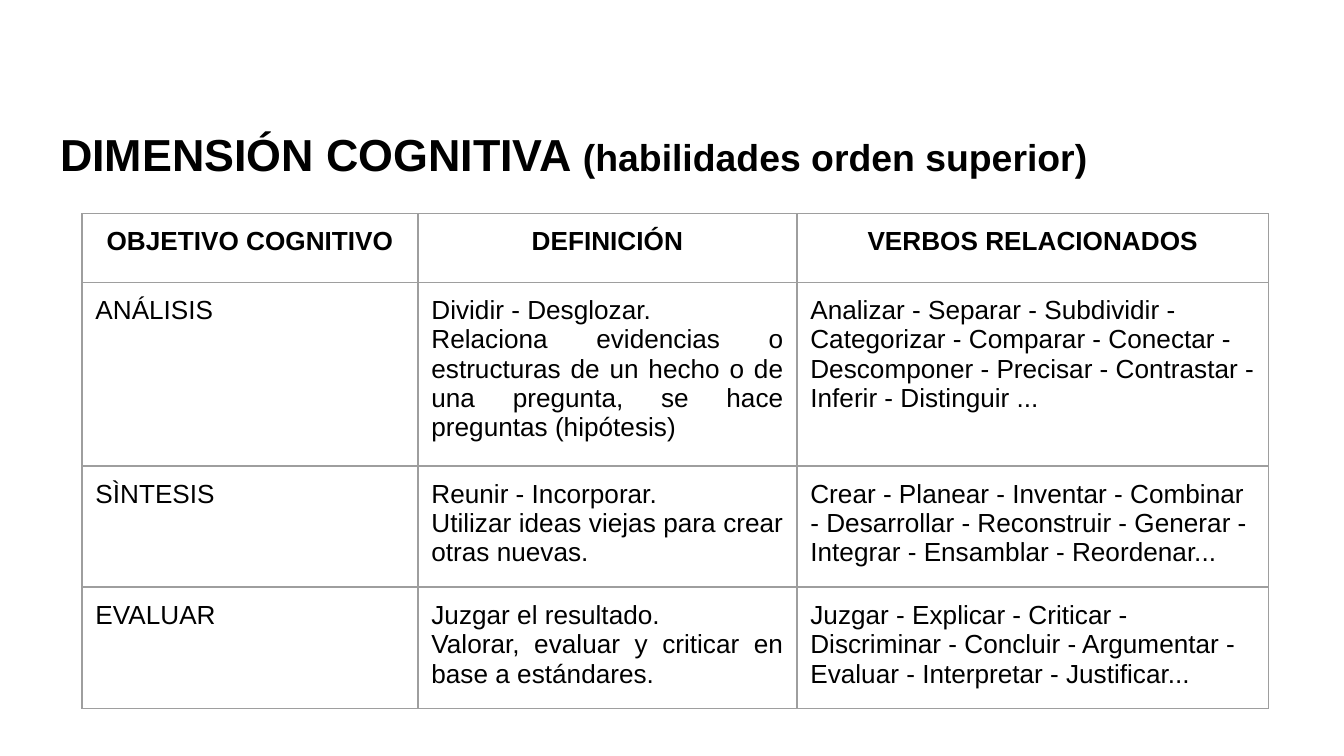
"""Build a slide with a table of higher-order cognitive skills."""
from lxml.etree import SubElement
from pptx import Presentation
from pptx.dml.color import RGBColor
from pptx.enum.text import MSO_ANCHOR, PP_ALIGN
from pptx.oxml.ns import qn
from pptx.util import Inches, Pt

TITLE = [("DIMENSIÓN COGNITIVA ", "title"), ("(habilidades orden superior)", "subtitle")]
HEADERS = ["OBJETIVO COGNITIVO", "DEFINICIÓN", "VERBOS RELACIONADOS"]
SKILLS = [
    ("ANÁLISIS",
     "Dividir - Desglozar.\nRelaciona evidencias o estructuras de un hecho o de una pregunta, "
     "se hace preguntas (hipótesis)",
     "Analizar - Separar - Subdividir - Categorizar - Comparar - Conectar - Descomponer - "
     "Precisar - Contrastar - Inferir - Distinguir ..."),
    ("SÌNTESIS",
     "Reunir - Incorporar.\nUtilizar ideas viejas para crear otras nuevas.",
     "Crear - Planear - Inventar - Combinar - Desarrollar - Reconstruir - Generar - Integrar - "
     "Ensamblar - Reordenar..."),
    ("EVALUAR",
     "Juzgar el resultado.\nValorar, evaluar y criticar en base a estándares.",
     "Juzgar - Explicar - Criticar - Discriminar - Concluir - Argumentar - Evaluar - "
     "Interpretar - Justificar..."),
]
THEME = {
    "font": "Arial", "text": "000000", "border": "9E9E9E", "border_width": 0.75,
    "title": 24, "subtitle": 20, "table": 14,
}
SLIDE_SIZE = (10, 10 * 9 / 16)
TITLE_BOX = (0.35, 0.61, 8.93, 0.83)
TABLE_ORIGIN = (0.61, 1.59)
TABLE_HEIGHT = 3.68
COLUMNS = (2.5, 2.82, 3.51)
ROWS = (0.51, 1.33, 0.87, 0.5)
ALIGNMENTS = (PP_ALIGN.LEFT, PP_ALIGN.JUSTIFY, PP_ALIGN.LEFT)
MARGINS = {f"margin_{side}": Inches(0.1) for side in ("left", "top", "right", "bottom")}


def set_attributes(target, values):
    """Set each named value on the target."""
    for name, value in values.items():
        setattr(target, name, value)


def add_span(para, text, size, bold):
    """Add one formatted run to a paragraph."""
    span = para.add_run()
    span.text = text
    set_attributes(span.font, {"name": THEME["font"], "size": Pt(THEME[size]), "bold": bold})
    span.font.color.rgb = RGBColor.from_string(THEME["text"])


def add_borders(cell):
    """Draw a thin line on all four sides of a cell."""
    properties = cell._tc.get_or_add_tcPr()
    for side in ("lnL", "lnR", "lnT", "lnB"):
        line = SubElement(properties, qn(f"a:{side}"), w=str(Pt(THEME["border_width"])))
        fill = SubElement(line, qn("a:solidFill"))
        SubElement(fill, qn("a:srgbClr"), val=THEME["border"])


def fill_cell(cell, text, alignment, bold):
    """Write and format the paragraphs of a table cell."""
    set_attributes(cell, MARGINS)
    add_borders(cell)
    cell.fill.background()
    for index, line in enumerate(text.split("\n")):
        para = cell.text_frame.add_paragraph() if index else cell.text_frame.paragraphs[0]
        para.alignment = alignment
        add_span(para, line, "table", bold)
        SubElement(para._p, qn("a:endParaRPr"), sz=str(THEME["table"] * 100))


def add_title(page):
    """Add the two-size heading."""
    frame = page.shapes.add_textbox(*map(Inches, TITLE_BOX)).text_frame
    set_attributes(frame, {"word_wrap": True, "vertical_anchor": MSO_ANCHOR.BOTTOM, **MARGINS})
    for text, size in TITLE:
        add_span(frame.paragraphs[0], text, size, True)


def add_skills_table(page):
    """Add the table with its header row and one row per skill."""
    extent = (*TABLE_ORIGIN, sum(COLUMNS), TABLE_HEIGHT)
    holder = page.shapes.add_table(len(ROWS), len(COLUMNS), *map(Inches, extent))
    table = holder.table
    set_attributes(table, {"first_row": False, "horz_banding": False})
    for column, width in zip(table.columns, COLUMNS):
        column.width = Inches(width)
    for row, height in zip(table.rows, ROWS):
        row.height = Inches(height)
    holder.height = Inches(TABLE_HEIGHT)
    for row_index, texts in enumerate([HEADERS, *SKILLS]):
        header = row_index == 0
        for column_index, text in enumerate(texts):
            alignment = PP_ALIGN.CENTER if header else ALIGNMENTS[column_index]
            fill_cell(table.cell(row_index, column_index), text, alignment, header)


def main():
    """Create and save the deck."""
    deck = Presentation()
    deck.slide_width, deck.slide_height = map(Inches, SLIDE_SIZE)
    page = deck.slides.add_slide(deck.slide_layouts[6])
    add_title(page)
    add_skills_table(page)
    deck.save("out.pptx")


if __name__ == "__main__":
    main()
